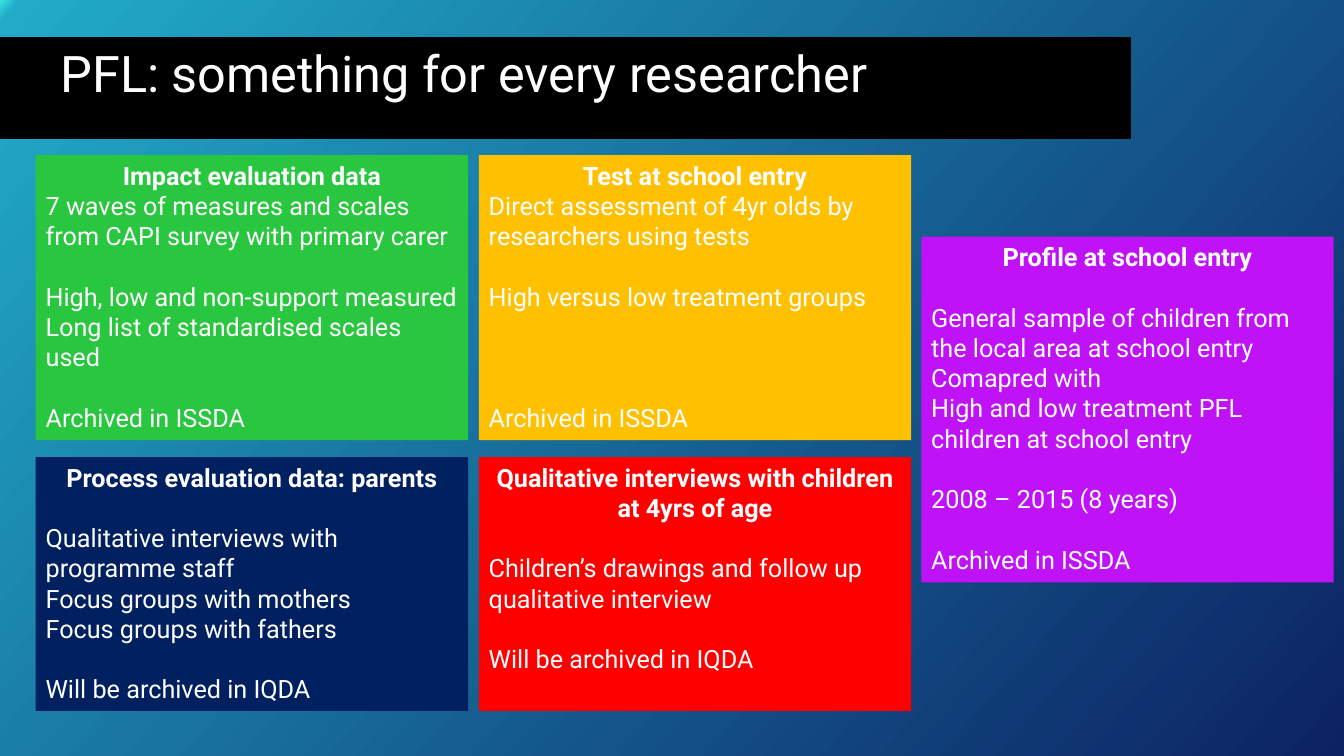
from copy import deepcopy

from pptx import Presentation
from pptx.dml.color import RGBColor
from pptx.enum.shapes import MSO_SHAPE
from pptx.enum.text import MSO_ANCHOR, PP_ALIGN
from pptx.oxml.ns import qn
from pptx.util import Pt

FONT = "Roboto"
WHITE = "FFFFFF"
BLANK_LINE = 21.6
GRADIENT = [(0, "36E6DD"), (0.01, "21ABC8"), (1, "0C2263")]

TITLE = "PFL: something for every researcher"

# Each body line: (blank lines above it, text)
IMPACT = ("Impact evaluation data", [
    (0, "7 waves of measures and scales from CAPI survey with primary carer"),
    (1, "High, low and non-support measured"),
    (0, "Long list of standardised scales used"),
    (1, "Archived in ISSDA"),
])
ABILITY = ("Test at school entry", [
    (0, "Direct assessment of 4yr olds by researchers using tests"),
    (1, "High versus low treatment groups"),
    (3, "Archived in ISSDA"),
])
PROCESS = ("Process evaluation data: parents", [
    (1, "Qualitative interviews with programme staff"),
    (0, "Focus groups with mothers"),
    (0, "Focus groups with fathers"),
    (1, "Will be archived in IQDA"),
])
INTERVIEWS = ("Qualitative interviews with children at 4yrs of age", [
    (1, "Children’s drawings and follow up qualitative interview"),
    (1, "Will be archived in IQDA"),
])
PROFILE = ("Profile at school entry", [
    (1, "General sample of children from the local area at school entry"),
    (0, "Comapred with"),
    (0, "High and low treatment PFL children at school entry"),
    (1, "2008 – 2015 (8 years)"),
    (1, "Archived in ISSDA"),
])

COLUMNS = [25.5, 342]
COLUMN_WIDTH = 308.9
ROWS = [(110.9, 203.5), (326.5, 181.4)]  # top, height
GRID = [
    [(IMPACT, "29C63F"), (ABILITY, "FFC000")],
    [(PROCESS, "002060"), (INTERVIEWS, "FF0000")],
]


def rgb(value):
    return RGBColor.from_string(value)


def paint_background(s):
    fill = s.background.fill
    fill.gradient()
    fill.gradient_angle = 360 - 42
    stop_list = s._element.find(".//" + qn("a:gsLst"))
    stop_list.append(deepcopy(stop_list[0]))
    for stop, (position, color) in zip(fill.gradient_stops, GRADIENT):
        stop.position = position
        stop.color.rgb = rgb(color)


def add_box(s, left, top, width, height, color):
    sp = s.shapes.add_shape(MSO_SHAPE.RECTANGLE, Pt(left), Pt(top), Pt(width), Pt(height))
    sp.shadow.inherit = False
    sp.fill.solid()
    sp.fill.fore_color.rgb = rgb(color)
    sp.line.fill.background()
    tf = sp.text_frame
    tf.word_wrap = True
    tf.vertical_anchor = MSO_ANCHOR.TOP
    return tf


def write(p, text, size, bold=False, align=PP_ALIGN.LEFT, space=0):
    p.alignment = align
    if space:
        p.space_before = Pt(space)
    r = p.add_run()
    r.text = text
    r.font.name = FONT
    r.font.size = Pt(size)
    r.font.bold = bold
    r.font.color.rgb = rgb(WHITE)


def add_card(s, content, color, left, top, width, height):
    heading, lines = content
    tf = add_box(s, left, top, width, height, color)
    write(tf.paragraphs[0], heading, 18, True, PP_ALIGN.CENTER)
    for blanks, text in lines:
        write(tf.add_paragraph(), text, 18, space=blanks * BLANK_LINE)


def main():
    prs = Presentation()
    prs.slide_width, prs.slide_height = Pt(960), Pt(540)
    s = prs.slides.add_slide(prs.slide_layouts[6])
    paint_background(s)

    for (top, height), cards in zip(ROWS, GRID):
        for left, (content, color) in zip(COLUMNS, cards):
            add_card(s, content, color, left, top, COLUMN_WIDTH, height)
    add_card(s, PROFILE, "BF12F6", 658.1, 169, 294.5, 247)

    title = add_box(s, 0, 26.6, 807.8, 72.7, "000000")
    title.margin_left = Pt(43.2)
    write(title.paragraphs[0], TITLE, 36)

    prs.save("out.pptx")


if __name__ == "__main__":
    main()
